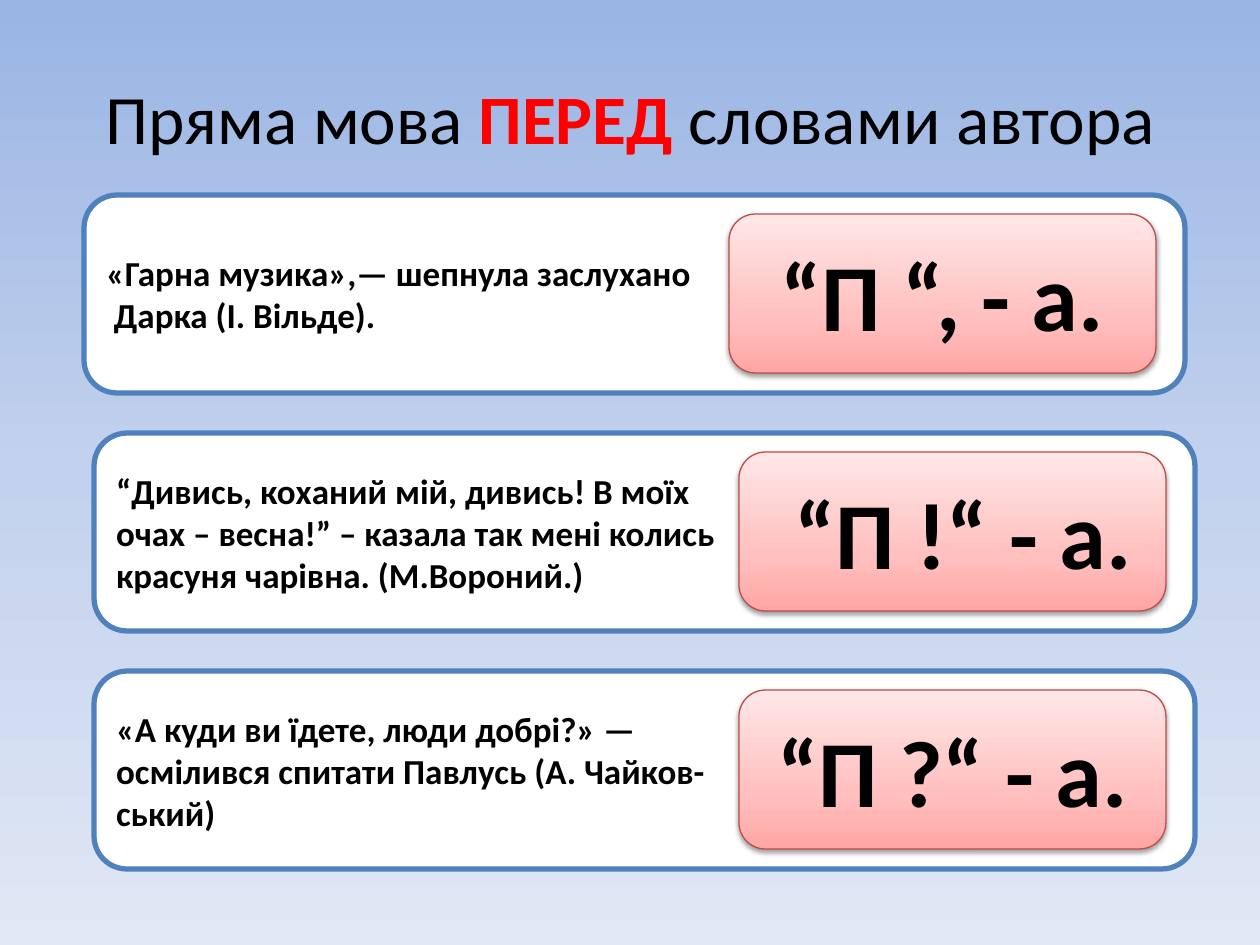
"""Build a slide on punctuating direct speech placed before the author's words."""
from lxml import etree
from pptx import Presentation
from pptx.dml.color import RGBColor
from pptx.enum.shapes import MSO_SHAPE
from pptx.enum.text import MSO_ANCHOR, PP_ALIGN
from pptx.oxml.ns import qn
from pptx.util import Emu, Pt

ROUND = MSO_SHAPE.ROUNDED_RECTANGLE
MIDDLE = MSO_ANCHOR.MIDDLE
LEFT, CENTER = PP_ALIGN.LEFT, PP_ALIGN.CENTER
FONT = "Calibri"
TITLE_ONLY = 5
COLORS = {
    "text": "000000",
    "accent": "FF0000",
    "card": "FFFFFF",
    "card_line": "4F81BD",
    "badge_line": "BF4C48",
    "shadow": "000000",
}
SKY = [(0, "9AB5E4"), (50, "C2D1ED"), (100, "E1E8F5")]
PINK = [(0, "FFA6A5"), (35, "FFC0BF"), (100, "FFE7E7")]

CARD_TOP, CARD_PITCH = 195, 238
CARD_W, CARD_H = 1101, 198
BADGE_DX, BADGE_DY = 645, 19
BADGE_W, BADGE_H = 427, 159
EXAMPLES = [
    (84, ["«Гарна музика»,— шепнула заслухано", " Дарка (І. Вільде)."], "“П “, - а."),
    (94, ["“Дивись, коханий мій, дивись! В моїх",
          "очах – весна!” – казала так мені колись",
          "красуня чарівна. (М.Вороний.)"], " “П !“ - а."),
    (94, ["«А куди ви їдете, люди добрі?» —",
          "осмілився спитати Павлусь (А. Чайков-",
          "ський)"], "“П ?“ - а."),
]


def px(n):
    return Emu(round(n * 914400 / 126))


def rgb(name):
    return RGBColor.from_string(COLORS[name])


class SlideBuilder:
    def __init__(self, prs):
        self.s = prs.slides.add_slide(prs.slide_layouts[TITLE_ONLY])

    def gradient(self, fill, element, stops, angle):
        fill.gradient()
        fill.gradient_angle = angle
        gs_lst = next(element.iter(qn("a:gsLst")))
        for gs in list(gs_lst):
            gs_lst.remove(gs)
        for pos, color in stops:
            gs = etree.SubElement(gs_lst, qn("a:gs"), pos=str(pos * 1000))
            etree.SubElement(gs, qn("a:srgbClr"), val=color)

    def background(self, stops):
        self.gradient(self.s.background.fill, self.s.element, stops, 270)

    def run(self, p, text, size, color="text", bold=True):
        r = p.add_run()
        r.text = text
        r.font.name = FONT
        r.font.size = Pt(size)
        r.font.bold = bold
        r.font.color.rgb = rgb(color)

    def title(self, x, y, w, h, runs):
        sp = self.s.shapes.title
        sp.left, sp.top, sp.width, sp.height = map(px, (x, y, w, h))
        tf = sp.text_frame
        tf.vertical_anchor = MIDDLE
        p = tf.paragraphs[0]
        p.alignment = CENTER
        for text, color, bold in runs:
            self.run(p, text, 39.6, color, bold)

    def box(self, x, y, w, h, lines, size, align, line, width):
        sp = self.s.shapes.add_shape(ROUND, *map(px, (x, y, w, h)))
        sp.shadow.inherit = False
        sp.line.color.rgb = rgb(line)
        sp.line.width = Pt(width)
        tf = sp.text_frame
        tf.word_wrap = True
        tf.vertical_anchor = MIDDLE
        for i, text in enumerate(lines):
            p = tf.add_paragraph() if i else tf.paragraphs[0]
            p.alignment = align
            self.run(p, text, size)
        return sp

    def card(self, x, y, lines):
        sp = self.box(x, y, CARD_W, CARD_H, lines, 20, LEFT, "card_line", 3)
        sp.fill.solid()
        sp.fill.fore_color.rgb = rgb("card")

    def badge(self, x, y, text):
        sp = self.box(x, y, BADGE_W, BADGE_H, [text], 54, CENTER, "badge_line", 0.75)
        sp_pr = sp.element.spPr
        self.gradient(sp.fill, sp_pr, PINK, 90)
        shadow = etree.SubElement(
            sp_pr.find(qn("a:effectLst")), qn("a:outerShdw"), blurRad=str(Pt(3.1)),
            dist=str(Pt(1.6)), dir="5400000", rotWithShape="0")
        color = etree.SubElement(shadow, qn("a:srgbClr"), val=COLORS["shadow"])
        etree.SubElement(color, qn("a:alpha"), val="38000")


def main():
    prs = Presentation()
    prs.slide_width, prs.slide_height = px(1260), px(945)
    b = SlideBuilder(prs)
    b.background(SKY)
    b.title(63, 38, 1134, 157, [
        ("Пряма мова ", "text", False),
        ("ПЕРЕД ", "accent", True),
        ("словами автора", "text", False),
    ])
    for i, (x, lines, scheme) in enumerate(EXAMPLES):
        y = CARD_TOP + i * CARD_PITCH
        b.card(x, y, lines)
        b.badge(x + BADGE_DX, y + BADGE_DY, scheme)
    prs.save("out.pptx")


if __name__ == "__main__":
    main()
